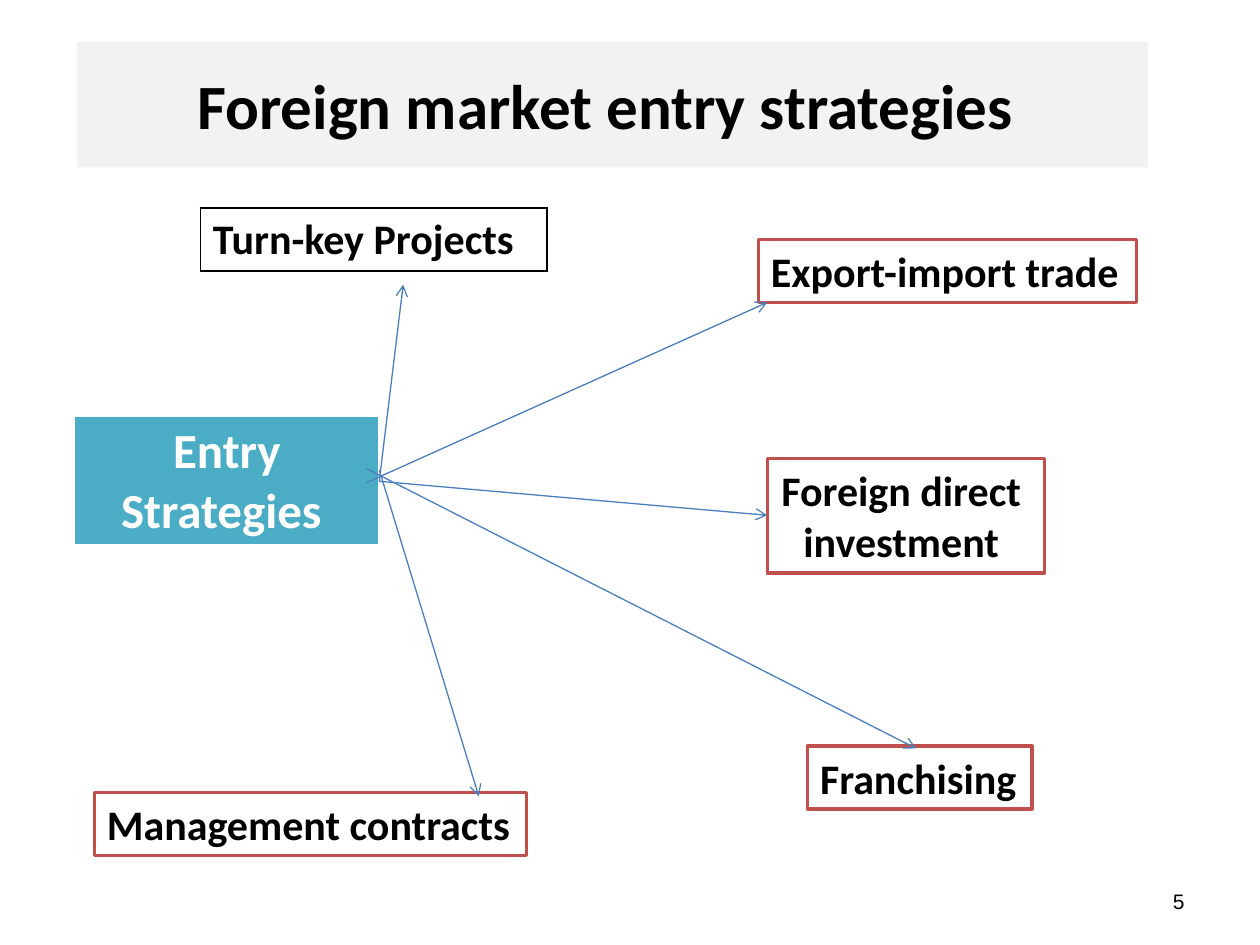
from pptx import Presentation
from pptx.dml.color import RGBColor
from pptx.enum.shapes import MSO_CONNECTOR, MSO_SHAPE
from pptx.enum.text import MSO_ANCHOR, MSO_AUTO_SIZE, PP_ALIGN
from pptx.oxml import parse_xml
from pptx.oxml.ns import nsdecls
from pptx.util import Inches, Pt

WIDE, HIGH = 10, 7.5
BLACK, WHITE, RED, TEAL = "000000", "FFFFFF", "C0504D", "4BACC6"
BLUE, GREY = "4B7EBC", "F2F2F2"

TITLE = "Foreign market entry strategies "
MODES = [
    (["Export-import trade"], PP_ALIGN.LEFT, (6.02, 1.9, 3, 0.5)),
    (["Foreign direct ", "investment "], PP_ALIGN.CENTER, (6.09, 3.64, 2.2, 0.91)),
    (["Franchising"], PP_ALIGN.LEFT, (6.41, 5.92, 1.78, 0.5)),
    (["Management contracts"], PP_ALIGN.LEFT, (0.75, 6.29, 3.43, 0.5)),
]
TABLES = [
    ("Entry Strategies ", (0.59, 3.3, 2.42, 1.01), TEAL,
     dict(size=28, color=WHITE, align=PP_ALIGN.CENTER),
     dict(L=1, R=1, T=1, B=3), WHITE),
    ("Turn-key Projects", (1.59, 1.65, 2.75, 0.5), WHITE,
     dict(), dict(L=1, R=1, T=1, B=1), BLACK),
]
ARROWS = [
    ((2.91, 3.83), (6.09, 2.4)),
    ((3.01, 3.82), (6.09, 4.09)),
    ((2.91, 3.72), (7.27, 5.94)),
    ((3.01, 3.73), (3.8, 6.32)),
    ((3.01, 3.82), (3.2, 2.26)),
]

deck = Presentation()
deck.slide_width, deck.slide_height = Inches(WIDE), Inches(HIGH)
slide = deck.slides.add_slide(deck.slide_layouts[6])


def rgb(code):
    return RGBColor.from_string(code)


def write(frame, lines, size=24, color=BLACK, font="Calibri", bold=True,
          align=PP_ALIGN.LEFT):
    for i, line in enumerate(lines):
        para = frame.add_paragraph() if i else frame.paragraphs[0]
        para.alignment = align
        run = para.add_run()
        run.text = line
        run.font.size, run.font.name, run.font.bold = Pt(size), font, bold
        run.font.color.rgb = rgb(color)


def block(area, fill, edge=None):
    shape = slide.shapes.add_shape(MSO_SHAPE.RECTANGLE, *map(Inches, area))
    shape.shadow.inherit = False
    shape.fill.solid()
    shape.fill.fore_color.rgb = rgb(fill)
    if edge:
        shape.line.color.rgb = rgb(edge)
        shape.line.width = Pt(2)
    else:
        shape.line.fill.background()
    return shape.text_frame


def table(text, area, fill, style, sides, edge):
    grid = slide.shapes.add_table(1, 1, *map(Inches, area)).table
    cell = grid.cell(0, 0)
    props = cell._tc.get_or_add_tcPr()
    for side, width in sides.items():
        props.append(parse_xml(
            f'<a:ln{side} {nsdecls("a")} w="{Pt(width)}"><a:solidFill>'
            f'<a:srgbClr val="{edge}"/></a:solidFill></a:ln{side}>'))
    cell.fill.solid()
    cell.fill.fore_color.rgb = rgb(fill)
    write(cell.text_frame, [text], **style)


def arrow(start, end):
    line = slide.shapes.add_connector(
        MSO_CONNECTOR.STRAIGHT, *map(Inches, start + end))
    line.line.color.rgb = rgb(BLUE)
    line.line.width = Pt(0.75)
    line.line._get_or_add_ln().append(
        parse_xml(f'<a:tailEnd {nsdecls("a")} type="arrow"/>'))
    line._element.spPr.append(parse_xml(f'<a:effectLst {nsdecls("a")}/>'))


page = slide.shapes.add_textbox(*map(Inches, (7.17, 6.95, 2.33, 0.4))).text_frame
page.word_wrap = True
page.vertical_anchor = MSO_ANCHOR.MIDDLE
write(page, ["5"], size=12, font="Arial", bold=False, align=PP_ALIGN.RIGHT)

head = block((0.61, 0.33, 8.5, 1), GREY)
head.vertical_anchor = MSO_ANCHOR.MIDDLE
write(head, [TITLE], size=36, align=PP_ALIGN.CENTER)

for lines, align, area in MODES:
    frame = block(area, WHITE, RED)
    frame.word_wrap = False
    frame.auto_size = MSO_AUTO_SIZE.SHAPE_TO_FIT_TEXT
    frame.vertical_anchor = MSO_ANCHOR.TOP
    write(frame, lines, align=align)

for item in TABLES:
    table(*item)

for start, end in ARROWS:
    arrow(start, end)

deck.save("out.pptx")
